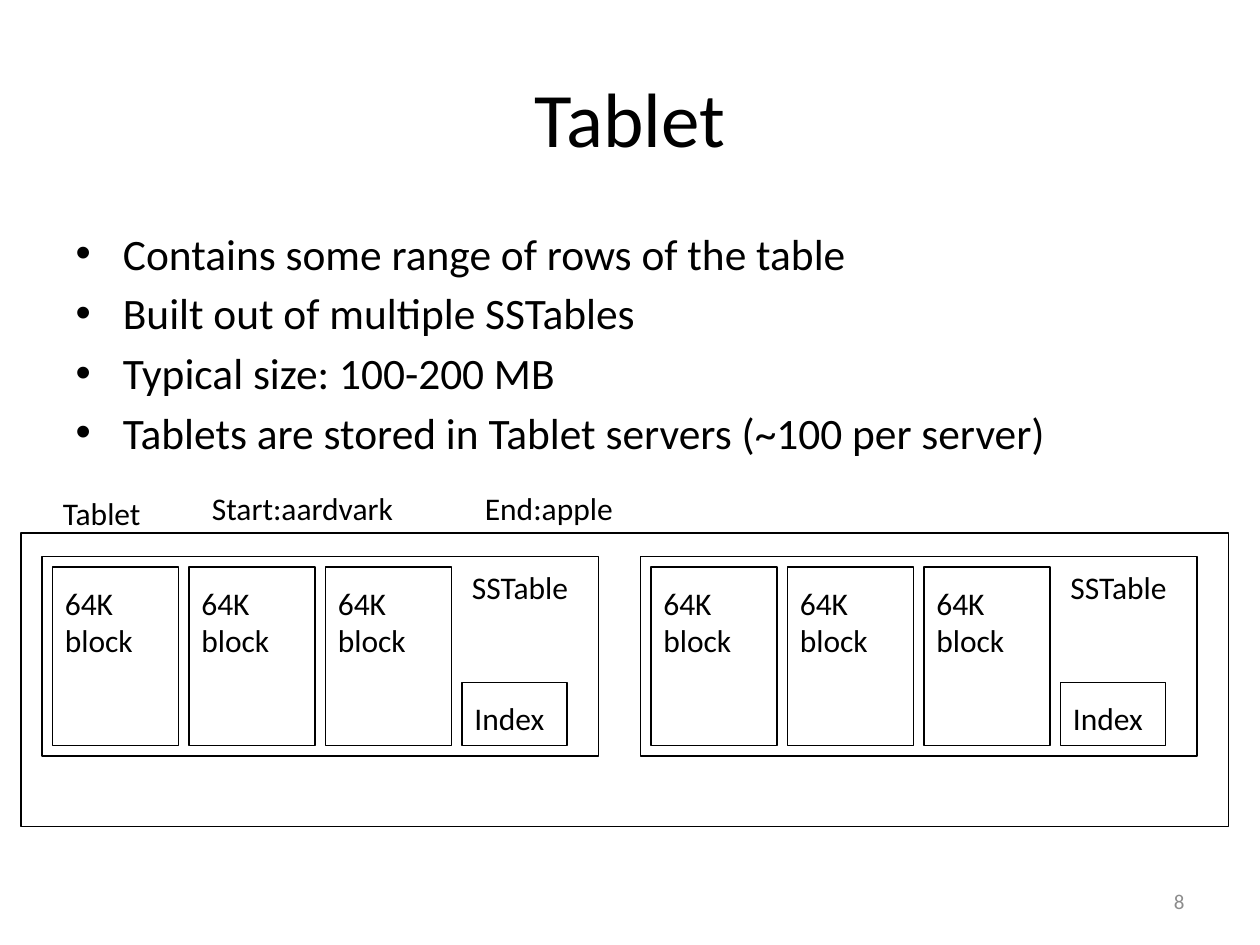
from pptx import Presentation
from pptx.dml.color import RGBColor
from pptx.enum.shapes import MSO_SHAPE
from pptx.enum.text import MSO_ANCHOR, MSO_AUTO_SIZE, PP_ALIGN
from pptx.util import Pt

RECTANGLE = MSO_SHAPE.RECTANGLE
MIDDLE, TOP = MSO_ANCHOR.MIDDLE, MSO_ANCHOR.TOP
LEFT, CENTER, RIGHT = PP_ALIGN.LEFT, PP_ALIGN.CENTER, PP_ALIGN.RIGHT
NO_FIT = MSO_AUTO_SIZE.NONE
FONT, BLACK, GREY = "Calibri", "000000", "8C8C8C"

TITLE = "Tablet"
BULLETS = [
    "Contains some range of rows of the table",
    "Built out of multiple SSTables",
    "Typical size: 100-200 MB",
    "Tablets are stored in Tablet servers (~100 per server)",
]
BLOCKS = ["64K block"] * 3
TABLET_FRAME = (12, 304.5, 690, 168)
TABLET_LABELS = [
    ("Tablet", (28.8, 278.6, 65, 29)),
    ("Start:aardvark", (114, 276, 144, 29)),
    ("End:apple", (270, 276, 108, 29)),
]
PAGE_NUMBER = ("8", (516, 500.5, 168, 28.8))

SSTABLE_LEFTS = (24, 366)
SSTABLE_TOP, SSTABLE_WIDTH, SSTABLE_HEIGHT = 318, 318, 114
PADDING = 6
BLOCK_WIDTH = 72
BLOCK_HEIGHT = SSTABLE_HEIGHT - 2 * PADDING
INDEX_WIDTH, INDEX_HEIGHT = 60, 36


def color(value):
    return RGBColor.from_string(value)


def place(shape, area):
    for name, value in zip(("left", "top", "width", "height"), area):
        setattr(shape, name, Pt(value))


def write(box, lines, size, align=LEFT, anchor=TOP, before=0, ink=BLACK):
    frame = box.text_frame
    frame.text = "\n".join(lines)
    settings = {"word_wrap": True, "auto_size": NO_FIT, "vertical_anchor": anchor}
    for name, value in settings.items():
        setattr(frame, name, value)
    for para in frame.paragraphs:
        para.alignment = align
        para.space_before = Pt(before)
        for span in para.runs:
            span.font.name = FONT
            span.font.size = Pt(size)
            span.font.color.rgb = color(ink)


def add_label(page, text, area, size=18, **style):
    box = page.shapes.add_textbox(*map(Pt, area))
    write(box, [text], size, **style)


def add_outline(page, area):
    shape = page.shapes.add_shape(RECTANGLE, *map(Pt, area))
    shape.shadow.inherit = False
    shape.fill.background()
    shape.line.color.rgb = color(BLACK)
    shape.line.width = Pt(0.75)


def add_sstable(page, left):
    top = SSTABLE_TOP + PADDING
    add_outline(page, (left, SSTABLE_TOP, SSTABLE_WIDTH, SSTABLE_HEIGHT))
    x = left + PADDING
    for block in BLOCKS:
        add_outline(page, (x, top, BLOCK_WIDTH, BLOCK_HEIGHT))
        add_label(page, block, (x, top + 6, 66, 50.4))
        x += BLOCK_WIDTH + PADDING
    index_top = top + BLOCK_HEIGHT - INDEX_HEIGHT
    add_outline(page, (x, index_top, INDEX_WIDTH, INDEX_HEIGHT))
    add_label(page, "Index", (x, index_top + 6, INDEX_WIDTH, 29))
    add_label(page, "SSTable", (x - 1.4, top - 3, 83.5, 29))


def main():
    deck = Presentation()
    deck.slide_width, deck.slide_height = Pt(720), Pt(540)
    page = deck.slides.add_slide(deck.slide_layouts[1])

    title, body = page.placeholders
    place(title, (36, 21.6, 648, 90))
    write(title, [TITLE], 44, align=CENTER, anchor=MIDDLE)
    place(body, (36, 126, 666, 132))
    write(body, BULLETS, 24.8, before=4.3)

    for left in SSTABLE_LEFTS:
        add_sstable(page, left)
    add_outline(page, TABLET_FRAME)
    for text, area in TABLET_LABELS:
        add_label(page, text, area)
    add_label(page, *PAGE_NUMBER, size=12, align=RIGHT, anchor=MIDDLE, ink=GREY)

    deck.save("out.pptx")


if __name__ == "__main__":
    main()
